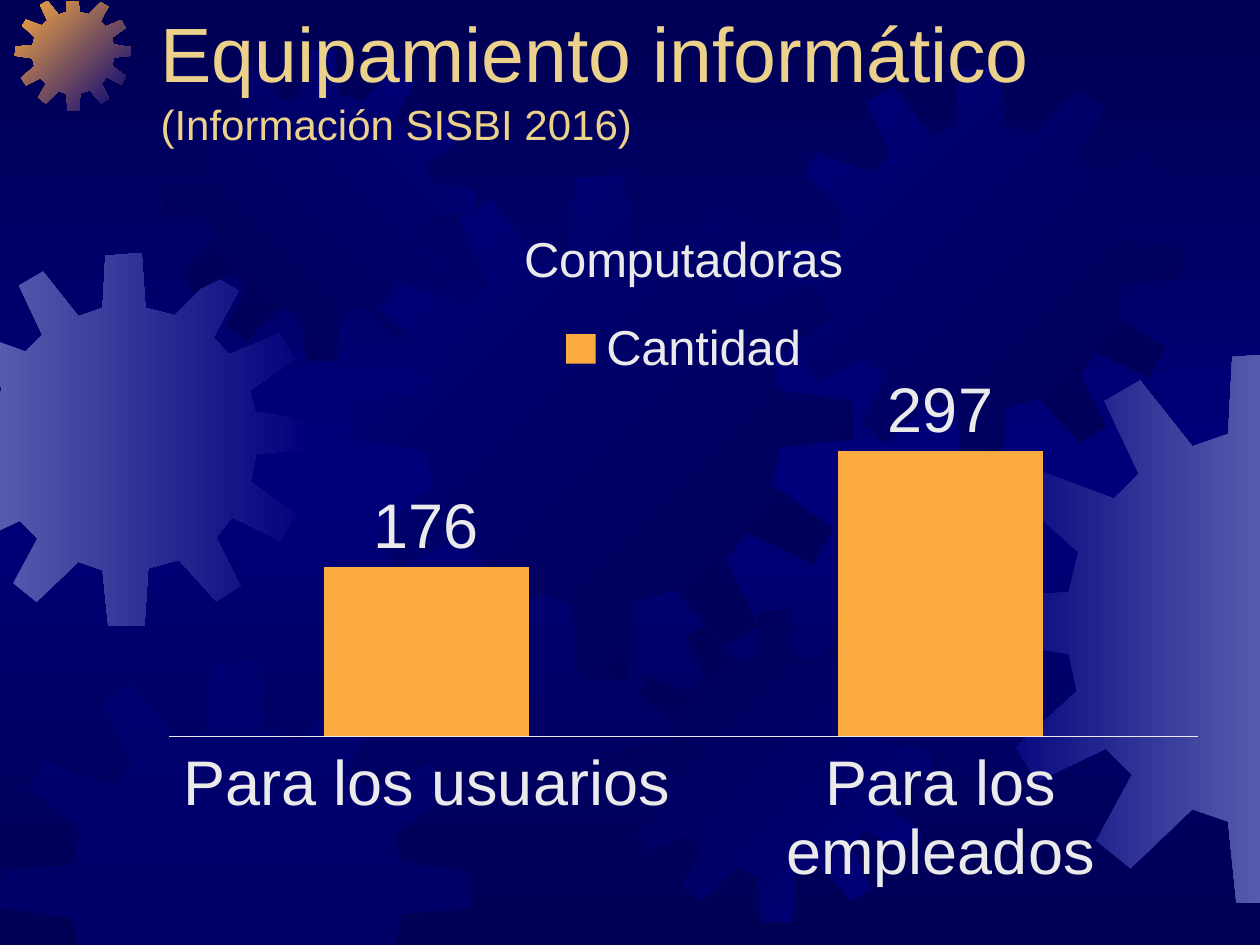
from copy import deepcopy

from lxml.etree import SubElement
from pptx import Presentation
from pptx.chart.data import CategoryChartData as ChartData
from pptx.dml.color import RGBColor as Rgb
from pptx.enum.chart import XL_CHART_TYPE as Kind, XL_LABEL_POSITION as Spot
from pptx.enum.chart import XL_LEGEND_POSITION as Side, XL_TICK_LABEL_POSITION as Ticks
from pptx.enum.chart import XL_TICK_MARK as Mark
from pptx.enum.text import MSO_ANCHOR as Anchor, MSO_AUTO_SIZE as Fit, PP_ALIGN as Align
from pptx.oxml.ns import qn
from pptx.util import Pt

PX = 914400 / 126
WIDTH, HEIGHT = 1260, 945
FONT = "Arial"
COLORS = {"night": "000054", "navy": "00007A", "mist": "555BAD",
          "orange": "FCAB40", "gold": "EBD189", "text": "EAEAEA"}

# Outline of one gear on a 401-unit square
GEAR_SIZE = 401
GEAR = [
    (255, 67), (223, 59), (219, 0), (180, 3), (177, 59), (151, 68),
    (113, 20), (87, 35), (112, 88), (94, 106), (38, 85), (25, 107),
    (68, 145), (61, 174), (1, 178), (0, 210), (61, 219), (67, 246),
    (22, 287), (38, 312), (88, 288), (107, 307), (81, 355), (106, 375),
    (151, 332), (177, 341), (183, 400), (222, 401), (226, 339), (259, 330),
    (299, 374), (325, 358), (299, 306), (316, 284), (368, 309), (384, 281),
    (336, 246), (342, 216), (401, 210), (400, 180), (341, 171), (335, 148),
    (383, 114), (367, 87), (313, 109), (296, 91), (323, 41), (297, 25)]

# left, top, size, gradient colours, clockwise angle
GEARS = [
    (-62, 253, 373, ("mist", "navy"), 0),
    (15, -5, 116, ("orange", "navy"), 45),
    (164, 49, 312, ("night", "navy"), 315),
    (349, 175, 505, ("navy", "night"), 45),
    (0, 661, 471, ("navy",), 0),
    (619, 610, 312, ("night", "navy"), 45),
    (779, 67, 403, ("navy", "night"), 45),
    (985, 353, 551, ("navy", "mist"), 0)]


def px(n):
    return round(n * PX)


def rgb(name):
    return Rgb.from_string(COLORS[name])


def place(shape, left, top, width, height):
    shape.left, shape.top = px(left), px(top)
    shape.width, shape.height = px(width), px(height)


def style(font, size, color):
    font.name, font.size, font.bold = FONT, Pt(size), False
    font.color.rgb = rgb(color)


def blend(fill, node, names, angle):
    """Fill with evenly spaced gradient stops; node is the XML holding the fill."""
    fill.gradient()
    stops = node.xpath(".//a:gsLst")[0]
    while len(stops) < len(names):
        stops.append(deepcopy(stops[0]))
    for i, (stop, name) in enumerate(zip(fill.gradient_stops, names)):
        stop.position = i / (len(names) - 1)
        stop.color.rgb = rgb(name)
    fill.gradient_angle = -angle % 360


def clip(points, axis, edge, sign):
    """Keep the part of a polygon where sign * (coordinate - edge) >= 0."""
    kept = []
    for a, b in zip(points[-1:] + points[:-1], points):
        da, db = (sign * (p[axis] - edge) for p in (a, b))
        if da * db < 0:
            t = da / (da - db)
            kept.append(tuple(u + t * (v - u) for u, v in zip(a, b)))
        if db >= 0:
            kept.append(b)
    return kept


def add_gear(slide, left, top, size, names, angle):
    k = size / GEAR_SIZE
    points = [(left + x * k, top + y * k) for x, y in GEAR]
    for axis, edge, sign in ((0, 0, 1), (0, WIDTH, -1), (1, 2, 1), (1, HEIGHT, -1)):
        points = clip(points, axis, edge, sign)
    points = [(px(x), px(y)) for x, y in points]
    pen = slide.shapes.build_freeform(*points[0])
    pen.add_line_segments(points[1:])
    gear = pen.convert_to_shape()
    gear.shadow.inherit = False
    gear.line.fill.background()
    if len(names) > 1:
        blend(gear.fill, gear.element.spPr, names, angle)
    else:
        gear.fill.solid()
        gear.fill.fore_color.rgb = rgb(names[0])
        tint = gear.element.spPr.xpath("./a:solidFill/a:srgbClr")[0]
        SubElement(tint, qn("a:alpha")).set("val", "50000")


def add_title(slide):
    title = slide.shapes.title
    place(title, 148, 41, 1071, 114)
    slide.shapes.element.append(title.element)  # in front of the gears
    frame = title.text_frame
    frame.word_wrap, frame.auto_size = True, Fit.NONE
    frame.vertical_anchor = Anchor.BOTTOM
    para = frame.paragraphs[0]
    para.alignment, para.line_spacing = Align.LEFT, 1.0
    for text, size in (("Equipamiento informático ", 44),
                       ("(Información SISBI 2016)", 24)):
        run = para.add_run()
        run.text = text
        style(run.font, size, "gold")


def add_bars(slide):
    data = ChartData(number_format="#,##0")
    data.categories = ["Para los usuarios", "Para los empleados"]
    data.add_series("Cantidad", (176, 297))
    box = (px(n) for n in (148, 199, 1071, 703))
    chart = slide.shapes.add_chart(Kind.COLUMN_CLUSTERED, *box, data).chart
    style(chart.font, 36, "text")

    chart.has_title = True
    head = chart.chart_title
    head.include_in_layout = False
    para = head.text_frame.paragraphs[0]
    para.text = "Computadoras"
    style(para.font, 28, "text")

    chart.has_legend = True
    chart.legend.position = Side.TOP
    chart.legend.include_in_layout = False
    style(chart.legend.font, 28, "text")

    cats, vals = chart.category_axis, chart.value_axis
    cats.major_tick_mark = cats.minor_tick_mark = Mark.NONE
    cats.tick_label_position = Ticks.LOW
    cats.format.line.color.rgb = rgb("text")
    cats.format.line.width = Pt(0.75)
    vals.has_major_gridlines = vals.visible = False
    vals.minimum_scale, vals.maximum_scale = 0, 350

    plot = chart.plots[0]
    plot.gap_width, plot.overlap = 150, -25
    plot.vary_by_categories = False
    bars = plot.series[0]
    bars.format.fill.solid()
    bars.format.fill.fore_color.rgb = rgb("orange")
    plot.has_data_labels = True
    tags = plot.data_labels
    tags.show_value, tags.position = True, Spot.OUTSIDE_END
    tags.number_format, tags.number_format_is_linked = "#,##0", False
    style(tags.font, 36, "text")


def main():
    deck = Presentation()
    deck.slide_width, deck.slide_height = px(WIDTH), px(HEIGHT)
    slide = deck.slides.add_slide(deck.slide_layouts[5])
    blend(slide.background.fill, slide.element, ("night", "navy", "night"), 90)
    for gear in GEARS:
        add_gear(slide, *gear)
    add_title(slide)
    add_bars(slide)
    deck.save("out.pptx")


if __name__ == "__main__":
    main()
